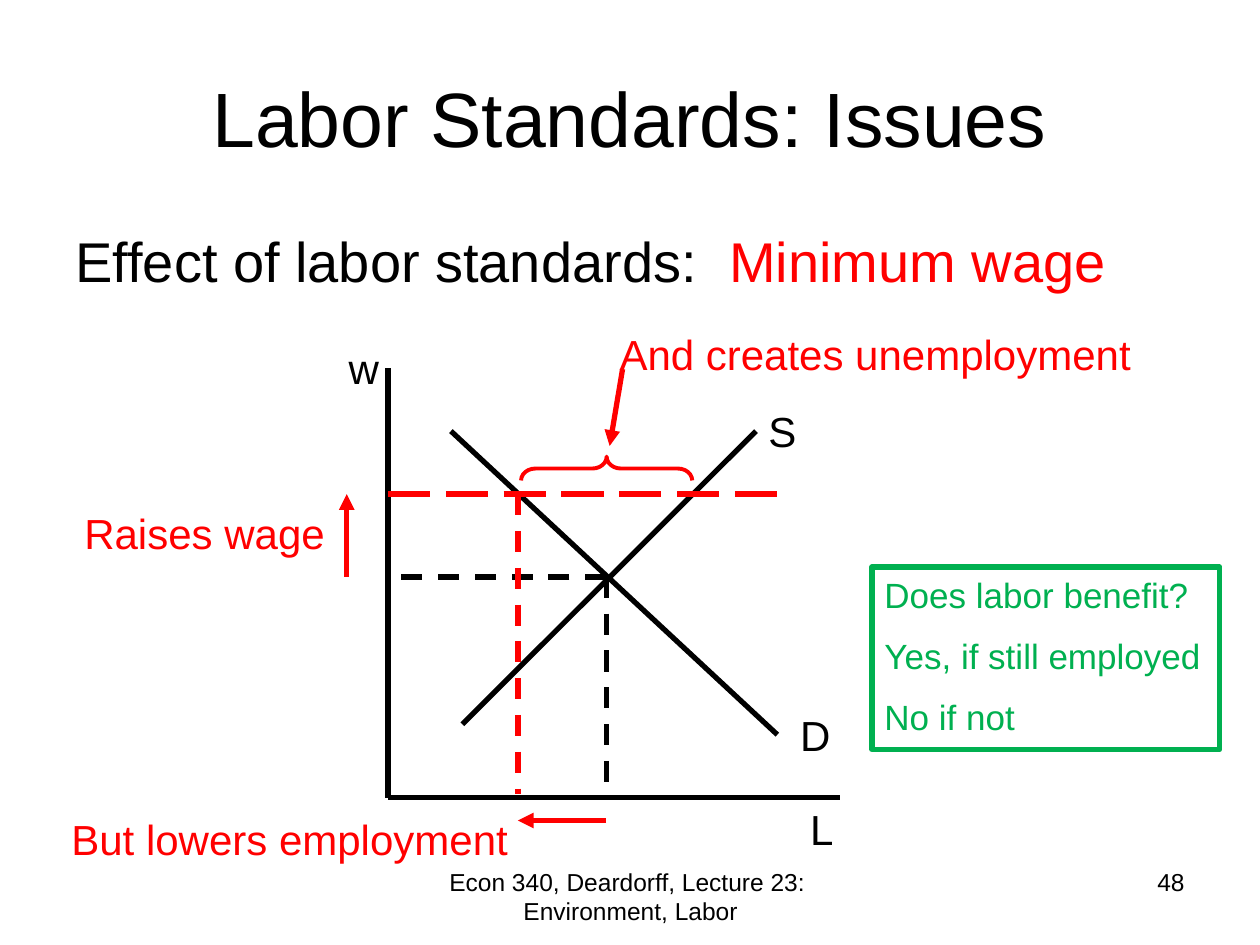
from lxml import etree
from pptx import Presentation
from pptx.dml.color import RGBColor
from pptx.enum.dml import MSO_LINE_DASH_STYLE as DASH
from pptx.enum.shapes import MSO_CONNECTOR, MSO_SHAPE
from pptx.enum.text import MSO_ANCHOR as ANCHOR, PP_ALIGN as ALIGN
from pptx.oxml.ns import qn
from pptx.util import Cm, Pt

BLACK, RED, GREEN = "000000", "FF0000", "00B050"


def rgb(value):
    return RGBColor.from_string(value)


def place(sp, x, y, w, h):
    for name, value in dict(left=x, top=y, width=w, height=h).items():
        setattr(sp, name, Cm(value))


def add_run(p, text, size, color):
    r = p.add_run()
    r.text = text
    for name, value in dict(name="Arial", size=Pt(size)).items():
        setattr(r.font, name, value)
    r.font.color.rgb = rgb(color)


def add_text(s, text, x, y, w, h, size=24, color=BLACK, align=ALIGN.LEFT, wrap=True):
    tf = s.shapes.add_textbox(Cm(x), Cm(y), Cm(w), Cm(h)).text_frame
    tf.word_wrap = wrap
    tf.paragraphs[0].alignment = align
    add_run(tf.paragraphs[0], text, size, color)


def add_line(s, x1, y1, x2, y2, color=BLACK, dash=None, arrow=False):
    c = s.shapes.add_connector(MSO_CONNECTOR.STRAIGHT, Cm(x1), Cm(y1), Cm(x2), Cm(y2))
    c.line.color.rgb = rgb(color)
    for name, value in dict(width=Pt(3), dash_style=dash).items():
        setattr(c.line, name, value)
    if arrow:
        etree.SubElement(c.line._get_or_add_ln(), qn("a:tailEnd"), type="triangle")
    etree.SubElement(c._element.spPr, qn("a:effectLst"))


def add_outline(s, kind, x, y, w, h, color, width):
    sp = s.shapes.add_shape(kind, Cm(x), Cm(y), Cm(w), Cm(h))
    sp.shadow.inherit = False
    sp.fill.background()
    sp.line.color.rgb = rgb(color)
    sp.line.width = Pt(width)
    return sp


def add_heading(s, x, y, w):
    title, body = s.shapes.title, s.placeholders[1]
    place(title, x, y, w, 3.18)
    place(body, x, y + 3.68, w, 12.57)
    title.text_frame.vertical_anchor = ANCHOR.MIDDLE
    p = title.text_frame.paragraphs[0]
    p.alignment = ALIGN.CENTER
    add_run(p, "Labor Standards: Issues", 44, BLACK)
    p = body.text_frame.paragraphs[0]
    pPr = p._p.get_or_add_pPr()
    for name in ("marL", "indent"):
        pPr.set(name, "0")
    etree.SubElement(pPr, qn("a:buNone"))
    add_run(p, "Effect of labor standards:  ", 32, BLACK)
    add_run(p, "Minimum wage", 32, RED)


def add_labor_market(s, x, y, w, h):
    min_wage, wage = 2.54, 4.21
    min_jobs, jobs = 2.62, 4.4
    dash, long_dash = DASH.DASH, DASH.LONG_DASH
    lines = [
        (0, 0, 0, h),
        (0, h, w, h),
        (1.5, 7.18, 7.42, 1.27),
        (1.27, 1.27, 7.85, 7.39),
        (jobs, wage, 0, wage, BLACK, dash),
        (0, min_wage, 7.85, min_wage, RED, long_dash),
        (jobs, wage, jobs, h, BLACK, dash),
        (min_jobs, min_wage, min_jobs, h - 0.08, RED, dash),
        (-0.83, wage, -0.83, min_wage, RED, None, True),
        (jobs, h + 0.46, min_jobs, h + 0.46, RED, None, True),
        (4.73, 0.02, 4.47, 1.57, RED, None, True),
    ]
    for x1, y1, x2, y2, *style in lines:
        add_line(s, x + x1, y + y1, x + x2, y + y2, *style)

    labels = [("D", 8.06, 6.75), ("S", 7.42, 0.63), ("L", 8.26, h), ("w", -1.04, -0.64)]
    for text, dx, dy in labels:
        add_text(s, text, x + dx, y + dy, 2.34, 1.27)

    effects = [
        ("Raises wage", -6.37, 2.69, 5.36),
        ("But lowers employment", -6.63, 8.86, 9.32),
        ("And creates unemployment", 4.42, -0.92, 10.82),
    ]
    for text, dx, dy, width in effects:
        add_text(s, text, x + dx, y + dy, width, 1.27, color=RED, wrap=False)

    brace = add_outline(s, MSO_SHAPE.RIGHT_BRACE, x + 4.17, y + 0.3, 0.48, 3.45, RED, 2.25)
    brace.rotation = 270
    brace.adjustments[0] = 0.6


def add_verdict(s, x, y, w, h):
    sp = add_outline(s, MSO_SHAPE.RECTANGLE, x, y, w, h, GREEN, 3)
    tf = sp.text_frame
    for name, value in dict(word_wrap=True, vertical_anchor=ANCHOR.TOP).items():
        setattr(tf, name, value)
    for i, text in enumerate(["Does labor benefit?", "Yes, if still employed", "No if not"]):
        p = tf.add_paragraph() if i else tf.paragraphs[0]
        p.alignment = ALIGN.LEFT
        p.space_before = Pt(11 if i else 0)
        add_run(p, text, 20, GREEN)


def add_footer(s, x, y, w, h):
    add_text(s, "Econ 340, Deardorff, Lecture 23:  Environment, Labor",
             x, y, 8.05, h, 14, align=ALIGN.CENTER)
    add_text(s, "48", x + w - 5.92, y, 5.92, h, 14, align=ALIGN.RIGHT)


def main():
    prs = Presentation()
    prs.slide_width, prs.slide_height = Cm(25.4), Cm(19.05)
    s = prs.slides.add_slide(prs.slide_layouts[1])
    add_heading(s, 1.27, 0.76, 22.86)
    add_footer(s, 8.69, 17.35, 15.44, 1.32)
    add_labor_market(s, 7.82, 7.42, 9.12, 8.66)
    add_verdict(s, 17.58, 11.43, 7.01, 3.68)
    prs.save("out.pptx")


if __name__ == "__main__":
    main()
